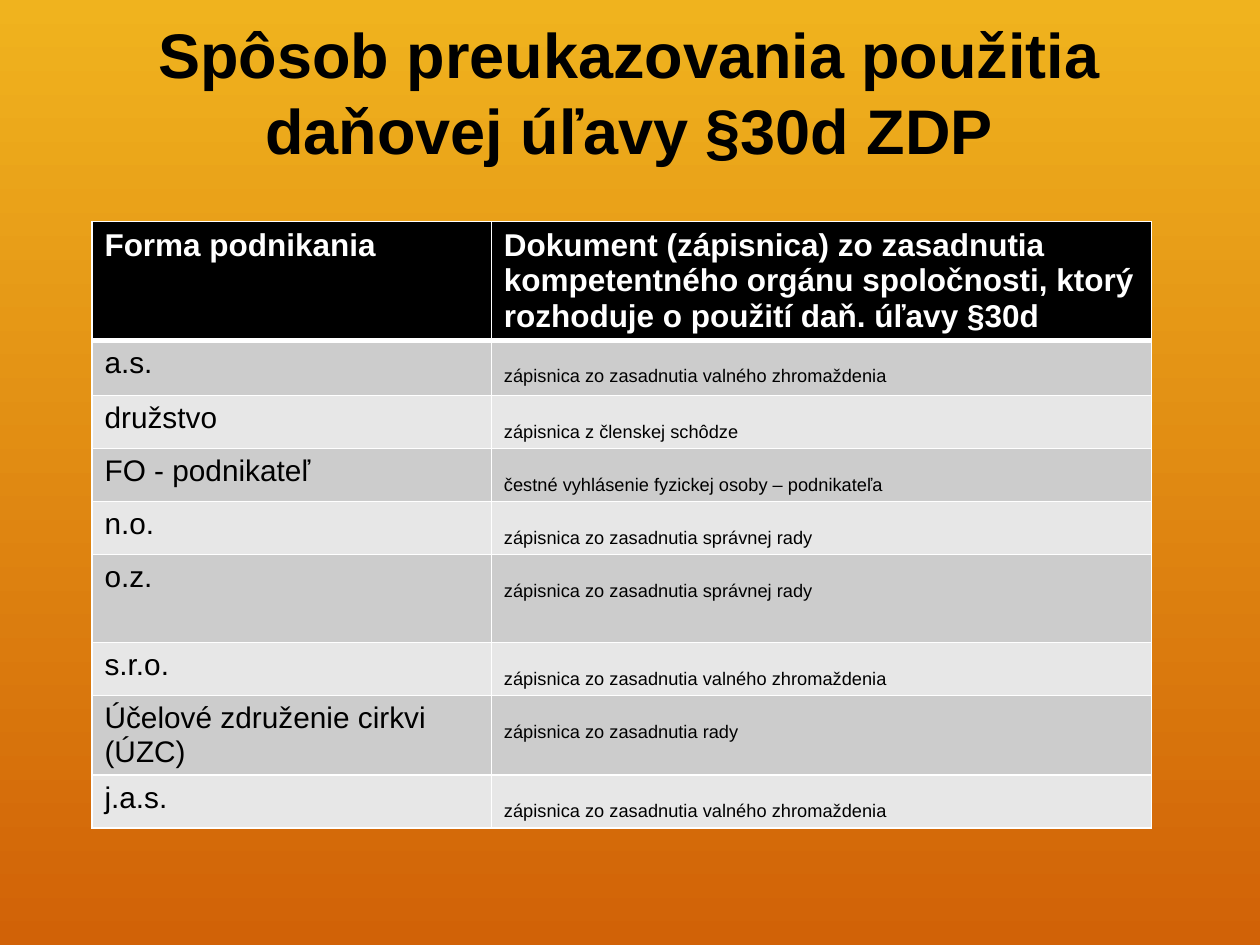
"""Build a slide with a table of documents proving the tax relief by legal form."""
from lxml.etree import SubElement as Sub
from pptx import Presentation as Deck
from pptx.dml.color import RGBColor as Color
from pptx.enum.text import MSO_ANCHOR as Anchor, PP_ALIGN as Align
from pptx.oxml.ns import qn
from pptx.util import Inches, Pt


def paint(item, tone):
    item.rgb = Color.from_string(tone)


def edge(cell, side, width):
    line = Sub(cell._tc.get_or_add_tcPr(), qn(f"a:ln{side}"), w=str(Pt(width)))
    Sub(Sub(line, qn("a:solidFill")), qn("a:srgbClr"), val="FFFFFF")


deck = Deck()
deck.slide_width, deck.slide_height = Inches(10), Inches(7.5)
slide = deck.slides.add_slide(deck.slide_layouts[5])
back = slide.background.fill
back.gradient()
back.gradient_angle = 270
for stop, tone in zip(back.gradient_stops, ("F0B31E", "D16207")):
    paint(stop.color, tone)

title = slide.shapes.title
place = {"left": 0.85, "top": 0.1, "width": 8.29, "height": 1.25}
for name, value in place.items():
    setattr(title, name, Inches(value))
frame = title.text_frame
frame.text = "Spôsob preukazovania použitia daňovej úľavy §30d ZDP"
frame.word_wrap = True
frame.vertical_anchor = Anchor.MIDDLE
para = frame.paragraphs[0]
para.alignment = Align.CENTER
para.line_spacing = 1.0
font = para.runs[0].font
for name, value in {"name": "Arial", "size": Pt(36), "bold": True}.items():
    setattr(font, name, value)
paint(font.color, "000000")

rows = [
    ("Forma podnikania", "Dokument (zápisnica) zo zasadnutia kompetentného orgánu "
     "spoločnosti, ktorý rozhoduje o použití daň. úľavy §30d"),
    ("a.s.", "zápisnica zo zasadnutia valného zhromaždenia"),
    ("družstvo", "zápisnica z členskej schôdze"),
    ("FO - podnikateľ", "čestné vyhlásenie fyzickej osoby – podnikateľa"),
    ("n.o.", "zápisnica zo zasadnutia správnej rady"),
    ("o.z.", "zápisnica zo zasadnutia správnej rady"),
    ("s.r.o.", "zápisnica zo zasadnutia valného zhromaždenia"),
    ("Účelové združenie cirkvi (ÚZC)", "zápisnica zo zasadnutia rady"),
    ("j.a.s.", "zápisnica zo zasadnutia valného zhromaždenia"),
]
tall = {0: 0.92, 1: 0.44, 5: 0.7, 7: 0.63}
highs = [tall.get(r, 0.42) for r in range(len(rows))]
wides = [3.17, 5.24]
grid = slide.shapes.add_table(
    len(rows), len(wides), Inches(0.73), Inches(1.76),
    Inches(sum(wides)), Inches(sum(highs))).table
for col, wide in zip(grid.columns, wides):
    col.width = Inches(wide)

for r, texts in enumerate(rows):
    grid.rows[r].height = Inches(highs[r])
    head = r == 0
    for c, text in enumerate(texts):
        cell = grid.cell(r, c)
        for side in "LRTB":
            thick = (head and side == "B") or (r == 1 and side == "T")
            edge(cell, side, 3 if thick else 1)
        cell.fill.solid()
        paint(cell.fill.fore_color, "000000" if head else ("E7E7E7", "CCCCCC")[r % 2])
        cell.text = text
        font = cell.text_frame.paragraphs[0].runs[0].font
        form = {"name": "Arial", "size": Pt(18 if head or c else 17), "bold": head}
        for name, value in form.items():
            setattr(font, name, value)
        paint(font.color, "FFFFFF" if head else "000000")
        if c and not head:
            font._element.set("baseline", "-25000")

deck.save("out.pptx")
